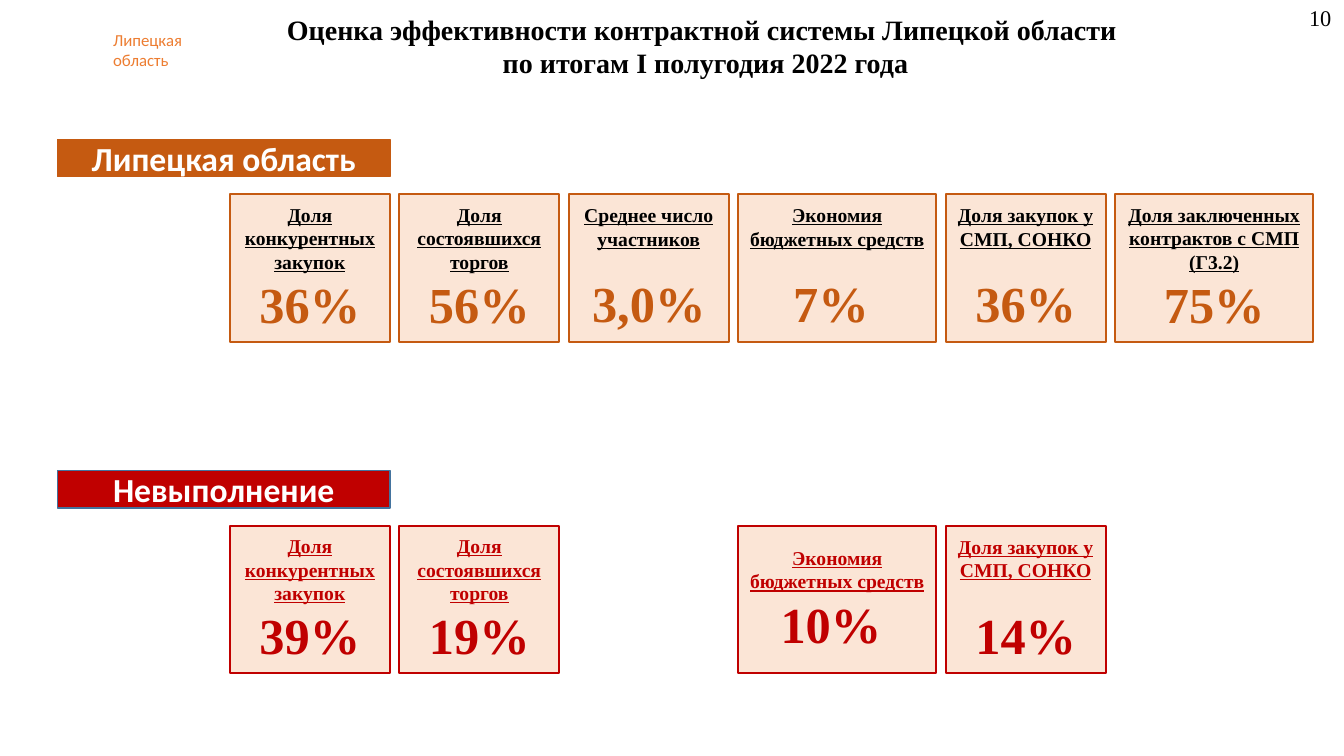
from pptx import Presentation
from pptx.dml.color import RGBColor
from pptx.enum.shapes import MSO_SHAPE
from pptx.enum.text import MSO_ANCHOR, MSO_AUTO_SIZE, PP_ALIGN
from pptx.util import Cm, Pt

BLACK = RGBColor(0x00, 0x00, 0x00)
WHITE = RGBColor(0xFF, 0xFF, 0xFF)
PEACH = RGBColor(0xFB, 0xE5, 0xD6)
ORANGE = RGBColor(0xED, 0x7D, 0x31)
RUST = RGBColor(0xC5, 0x5A, 0x11)
RED = RGBColor(0xC0, 0x00, 0x00)
STEEL = RGBColor(0x43, 0x73, 0x9E)
SERIF, SANS = "Times New Roman", "Calibri"

NARROW, WIDE, CARD_GAP = 4.04, 5.0, 0.23
COLUMN_WIDTHS = [NARROW, NARROW, NARROW, WIDE, NARROW, WIDE]
CARDS_LEFT, CARDS_DROP, CARD_HEIGHT = 5.79, 1.39, 3.71
BANNER_LEFT, BANNER_WIDTH, BANNER_HEIGHT = 1.45, 8.38, 0.94
LINE_GAP = 16

COMPETITIVE = "Доля конкурентных закупок"
HELD = "Доля состоявшихся торгов"
SAVINGS = "Экономия бюджетных средств"
SMALL_BUSINESS = "Доля закупок у СМП, СОНКО"

REGION_CARDS = [
    (0, [COMPETITIVE], "36%", 0),
    (1, [HELD], "56%", 0),
    (2, ["Среднее число участников"], "3,0%", LINE_GAP),
    (3, [SAVINGS], "7% ", LINE_GAP),
    (4, [SMALL_BUSINESS], "36%", LINE_GAP),
    (5, ["Доля заключенных контрактов с СМП", "(Г3.2)"], "75%", 0),
]
FAILURE_CARDS = [
    (0, [COMPETITIVE], "39%", 0),
    (1, [HELD], "19%", 0),
    (3, [SAVINGS], "10% ", 0),
    (4, [SMALL_BUSINESS], "14%", LINE_GAP),
]


def format_text(p, size, font, color, bold=False, underline=False, align=PP_ALIGN.CENTER):
    p.alignment = align
    for r in p.runs:
        r.font.size = Pt(size)
        r.font.name = font
        r.font.color.rgb = color
        r.font.bold = bold
        r.font.underline = underline


def add_title(s, left, top, width, height):
    title = s.shapes.title
    title.left, title.top, title.width, title.height = Cm(left), Cm(top), Cm(width), Cm(height)
    tf = title.text_frame
    tf.text = "Оценка эффективности контрактной системы Липецкой области \nпо итогам I полугодия 2022 года"
    tf.word_wrap = True
    tf.auto_size = MSO_AUTO_SIZE.NONE
    tf.vertical_anchor = MSO_ANCHOR.TOP
    for p in tf.paragraphs:
        format_text(p, 20, SERIF, BLACK, bold=True)


def add_label(s, left, top, width, height, text, size, font, color):
    tf = s.shapes.add_textbox(Cm(left), Cm(top), Cm(width), Cm(height)).text_frame
    tf.text = text
    tf.word_wrap = True
    for p in tf.paragraphs:
        format_text(p, size, font, color, align=PP_ALIGN.LEFT)


def add_box(s, left, top, width, height, fill, line, line_width):
    sp = s.shapes.add_shape(MSO_SHAPE.RECTANGLE, Cm(left), Cm(top), Cm(width), Cm(height))
    sp.shadow.inherit = False
    sp.fill.solid()
    sp.fill.fore_color.rgb = fill
    sp.line.color.rgb = line
    sp.line.width = Pt(line_width)
    tf = sp.text_frame
    tf.word_wrap = True
    tf.vertical_anchor = MSO_ANCHOR.MIDDLE
    return tf


def add_card(s, left, top, width, height, caption, value, gap, caption_color, accent):
    tf = add_box(s, left, top, width, height, PEACH, accent, 1.5)
    tf.text = "\n".join(caption)
    for p in tf.paragraphs:
        format_text(p, 14, SERIF, caption_color, bold=True, underline=True)
    p = tf.add_paragraph()
    p.text = value
    p.space_before = Pt(gap)
    format_text(p, 36, SERIF, accent, bold=True)


def add_section(s, top, heading, cards, caption_color, accent, border):
    tf = add_box(s, BANNER_LEFT, top, BANNER_WIDTH, BANNER_HEIGHT, accent, border, 1)
    tf.text = heading
    format_text(tf.paragraphs[0], 24, SANS, WHITE, bold=True)
    for column, caption, value, gap in cards:
        left = CARDS_LEFT + sum(COLUMN_WIDTHS[:column]) + column * CARD_GAP
        add_card(s, left, top + CARDS_DROP, COLUMN_WIDTHS[column], CARD_HEIGHT,
                 caption, value, gap, caption_color, accent)


def main():
    prs = Presentation()
    prs.slide_width, prs.slide_height = Cm(33.87), Cm(19.05)
    s = prs.slides.add_slide(prs.slide_layouts[5])
    add_label(s, 2.6, 0.62, 2.31, 1.28, "Липецкая\nобласть", 12, SANS, ORANGE)
    add_title(s, 4.65, 0.18, 26.26, 1.96)
    add_section(s, 3.51, "Липецкая область", REGION_CARDS, BLACK, RUST, RUST)
    add_section(s, 11.86, "Невыполнение", FAILURE_CARDS, RED, RED, STEEL)
    add_label(s, 32.74, -0.03, 1.13, 0.94, "10", 16, SERIF, BLACK)
    prs.save("out.pptx")


if __name__ == "__main__":
    main()
